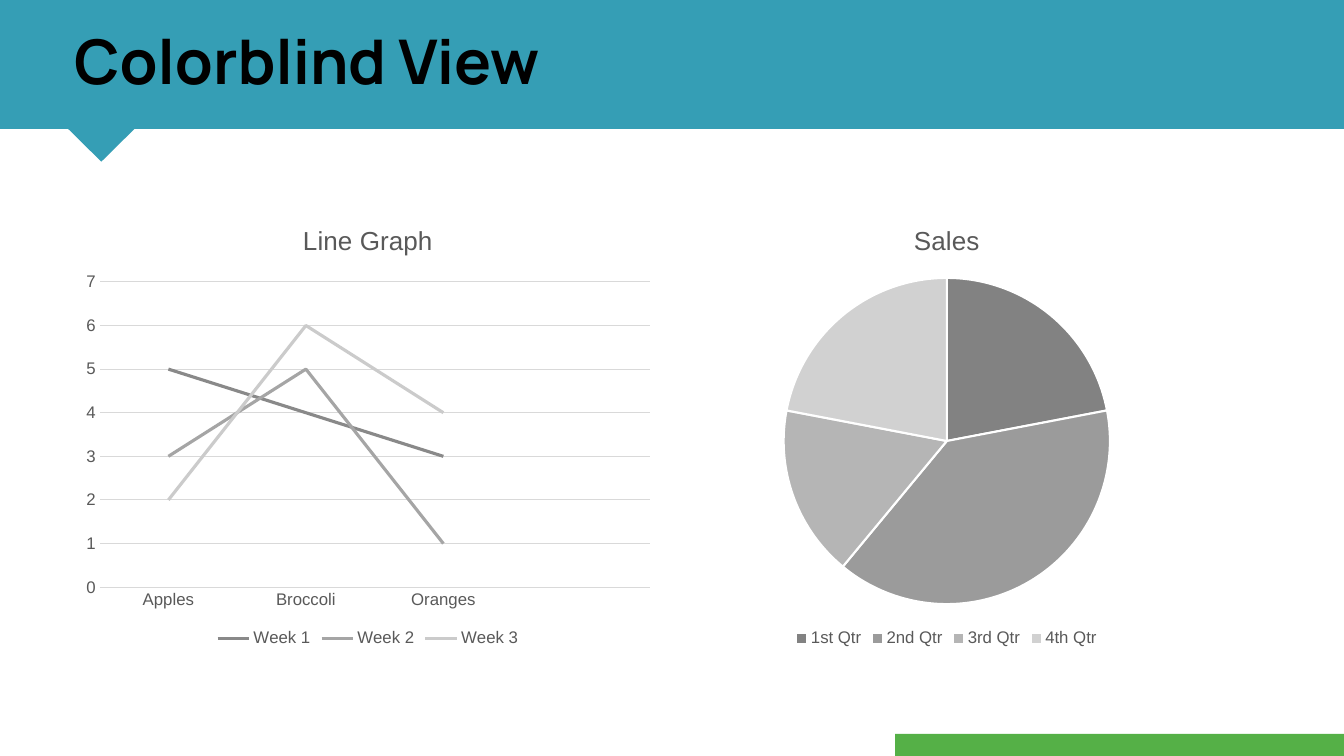
from dataclasses import dataclass

from pptx import Presentation
from pptx.chart.data import CategoryChartData
from pptx.dml.color import RGBColor
from pptx.enum.chart import XL_CHART_TYPE, XL_LEGEND_POSITION, XL_MARKER_STYLE, XL_TICK_MARK
from pptx.enum.shapes import MSO_SHAPE
from pptx.enum.text import MSO_ANCHOR, MSO_AUTO_SIZE, PP_ALIGN
from pptx.util import Inches, Pt

LINE, PIE = XL_CHART_TYPE.LINE, XL_CHART_TYPE.PIE
BOTTOM = XL_LEGEND_POSITION.BOTTOM
NO_TICK, NO_MARK = XL_TICK_MARK.NONE, XL_MARKER_STYLE.NONE
RECT, DIAMOND = MSO_SHAPE.RECTANGLE, MSO_SHAPE.FLOWCHART_DECISION
MIDDLE, LEFT, NO_FIT = MSO_ANCHOR.MIDDLE, PP_ALIGN.LEFT, MSO_AUTO_SIZE.NONE

WIDTH, HEIGHT = Inches(13.33), Inches(7.5)


@dataclass(frozen=True)
class Theme:
    teal: str = "359EB5"
    green: str = "55B047"
    ink: str = "000000"
    grey: str = "595959"
    rule: str = "D9D9D9"
    white: str = "FFFFFF"
    weeks: tuple = ("898989", "A5A5A5", "CBCBCB")
    quarters: tuple = ("828282", "9B9B9B", "B5B5B5", "D1D1D1")
    head: str = "Manrope"
    body: str = "Arial"
    title: float = 44
    caption: float = 18.6
    label: float = 12


THEME = Theme()


def share(box, left, top, width, height):
    x, y, across, down = box
    return (
        int(x + across * left / 100),
        int(y + down * top / 100),
        int(across * width / 100),
        int(down * height / 100),
    )


def style(font, name, size, color, bold=False):
    font.name, font.size, font.bold = name, Pt(size), bold
    font.color.rgb = RGBColor.from_string(color)


def stroke(line, color, width):
    line.color.rgb = RGBColor.from_string(color)
    line.width = Pt(width)


def paint(fill, color):
    fill.solid()
    fill.fore_color.rgb = RGBColor.from_string(color)


def add_block(slide, kind, box, color):
    block = slide.shapes.add_shape(kind, *box)
    block.shadow.inherit = False
    paint(block.fill, color)
    block.line.fill.background()


def add_header(slide, box, text):
    add_block(slide, DIAMOND, share(box, 4.95, 72, 5.18, 53.3), THEME.teal)
    add_block(slide, RECT, box, THEME.teal)
    title = slide.shapes.title
    slide.shapes.element.append(title.element)
    title.left, title.top, title.width, title.height = share(box, 4.77, 0, 89.05, 100)
    frame = title.text_frame
    frame.text = text
    frame.word_wrap = True
    frame.auto_size = NO_FIT
    frame.vertical_anchor = MIDDLE
    line = frame.paragraphs[0]
    line.alignment, line.line_spacing = LEFT, 0.9
    style(line.font, THEME.head, THEME.title, THEME.ink, True)


def add_graph(slide, box, kind, caption, labels, series):
    data = CategoryChartData()
    data.categories = labels
    for name, values in series:
        data.add_series(name, values)
    chart = slide.shapes.add_chart(kind, *box, data).chart
    style(chart.font, THEME.body, THEME.label, THEME.grey)
    chart.has_title = True
    frame = chart.chart_title.text_frame
    frame.text = caption
    style(frame.paragraphs[0].font, THEME.body, THEME.caption, THEME.grey)
    chart.chart_title.include_in_layout = False
    chart.has_legend = True
    chart.legend.position = BOTTOM
    chart.legend.include_in_layout = False
    style(chart.legend.font, THEME.body, THEME.label, THEME.grey)
    return chart


def add_lines(slide, box):
    weeks = (
        ("Week 1", (5, 4, 3, None)),
        ("Week 2", (3, 5, 1, None)),
        ("Week 3", (2, 6, 4, None)),
    )
    labels = ("Apples", "Broccoli", "Oranges", "")
    chart = add_graph(slide, box, LINE, "Line Graph", labels, weeks)
    for axis in (chart.category_axis, chart.value_axis):
        axis.major_tick_mark = axis.minor_tick_mark = NO_TICK
        style(axis.tick_labels.font, THEME.body, THEME.label, THEME.grey)
    stroke(chart.category_axis.format.line, THEME.rule, 0.75)
    scale = chart.value_axis
    scale.minimum_scale, scale.maximum_scale, scale.major_unit = 0, 7, 1
    scale.format.line.fill.background()
    stroke(scale.major_gridlines.format.line, THEME.rule, 0.75)
    chart.plots[0].vary_by_categories = False
    for week, color in zip(chart.plots[0].series, THEME.weeks):
        week.smooth = False
        week.marker.style = NO_MARK
        stroke(week.format.line, color, 2.25)


def add_pie(slide, box):
    labels = ("1st Qtr", "2nd Qtr", "3rd Qtr", "4th Qtr")
    sales = (("Sales", (22, 39, 17, 22)),)
    chart = add_graph(slide, box, PIE, "Sales", labels, sales)
    chart.plots[0].vary_by_categories = True
    points = chart.plots[0].series[0].points
    for index, color in enumerate(THEME.quarters):
        look = points[index].format
        paint(look.fill, color)
        stroke(look.line, THEME.white, 1.5)


def main():
    deck = Presentation()
    deck.slide_width, deck.slide_height = WIDTH, HEIGHT
    slide = deck.slides.add_slide(deck.slide_layouts[5])
    paint(slide.background.fill, THEME.white)
    page = (0, 0, WIDTH, HEIGHT)
    add_block(slide, RECT, share(page, 66.6, 97.07, 33.4, 2.93), THEME.green)
    add_header(slide, share(page, 0, 0, 100, 17.07), "Colorblind View")
    add_lines(slide, share(page, 5.55, 27.07, 43.66, 59.07))
    add_pie(slide, share(page, 50.04, 27.07, 40.81, 59.07))
    deck.save("out.pptx")


if __name__ == "__main__":
    main()
